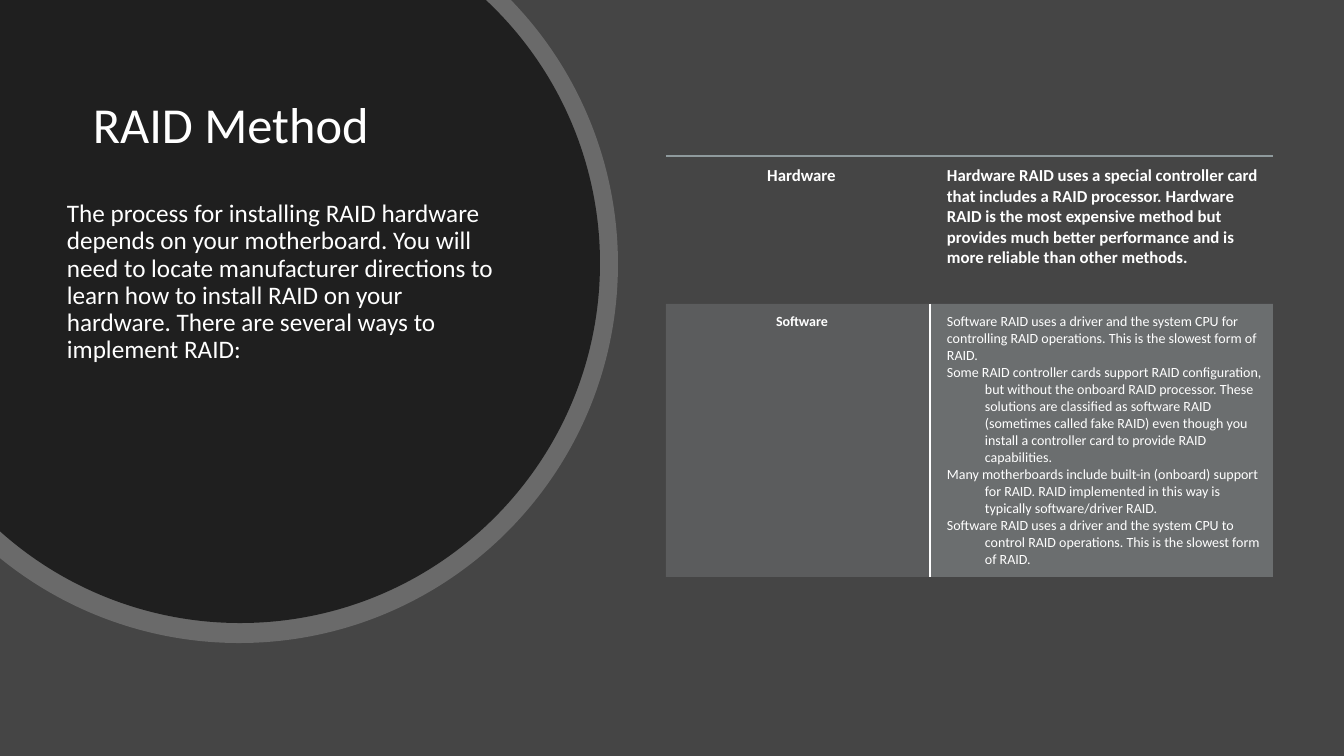
import math

from lxml import etree
from pptx import Presentation
from pptx import util as u
from pptx.dml.color import RGBColor
from pptx.enum import text
from pptx.oxml.ns import qn

HUES = {"back": "454545", "ring": "FFFFFF", "disc": "0D0D0D", "ink": "FFFFFF",
        "rule": "8F9A9D", "cell": "B4BCBE"}
PLAIN = "{2D5ABB26-0587-4C30-8999-92F81FD0307C}"
INTRO = ("The process for installing RAID hardware depends on your motherboard. "
         "You will need to locate manufacturer directions to learn how to install "
         "RAID on your hardware. There are several ways to implement RAID:")
HARD = ("Hardware RAID uses a special controller card that includes a RAID processor. "
        "Hardware RAID is the most expensive method but provides much better "
        "performance and is more reliable than other methods.")
SOFT = [
    "Software RAID uses a driver and the system CPU for controlling RAID operations. "
    "This is the slowest form of RAID.",
    "Some RAID controller cards support RAID configuration, but without the onboard "
    "RAID processor. These solutions are classified as software RAID (sometimes called "
    "fake RAID) even though you install a controller card to provide RAID capabilities.",
    "Many motherboards include built-in (onboard) support for RAID. RAID implemented "
    "in this way is typically software/driver RAID.",
    "Software RAID uses a driver and the system CPU to control RAID operations. "
    "This is the slowest form of RAID.",
]


def px(num):
    """Turn pixels into EMU."""
    return u.Emu(round(num * 63500 / 7))


def paint(fill, name, alpha=100):
    """Fill with a named colour at a percentage of opacity."""
    fill.solid()
    fill.fore_color.rgb = RGBColor.from_string(HUES[name])
    if alpha < 100:
        hue = fill._xPr.find(qn("a:solidFill"))[0]
        etree.SubElement(hue, qn("a:alpha"), val=str(alpha * 1000))


def style(para, size, bold=False):
    """Format the runs of a paragraph."""
    for run in para.runs:
        font = run.font
        font.name, font.size, font.bold = "Calibri", u.Pt(size), bold
        font.color.rgb = RGBColor.from_string(HUES["ink"])


def bend(step, x, y, rad, a, b):
    """Turn a line step into a cubic arc from angle a to angle b."""
    pull = 4 / 3 * math.tan((b - a) / 4)
    spots = [(math.cos(a) - pull * math.sin(a), math.sin(a) + pull * math.cos(a)),
             (math.cos(b) + pull * math.sin(b), math.sin(b) - pull * math.cos(b))]
    step.tag = qn("a:cubicBezTo")
    for i, (dx, dy) in enumerate(spots):
        spot = etree.Element(qn("a:pt"), x=str(px(x + rad * dx)), y=str(px(y + rad * dy)))
        step.insert(i, spot)


def disc(slide, x, y, rad, name, alpha):
    """Draw a circle cut off by the top and left slide edges."""
    turns = [-math.asin(y / rad), 0, math.pi / 2, math.acos(-x / rad)]
    ends = [(px(x + rad * math.cos(t)), px(y + rad * math.sin(t))) for t in turns]
    pen = slide.shapes.build_freeform(0, 0)
    pen.add_line_segments(ends, close=True)
    shape = pen.convert_to_shape()
    steps = list(shape._element.iter(qn("a:lnTo")))[1:4]
    for step, a, b in zip(steps, turns, turns[1:]):
        bend(step, x, y, rad, a, b)
    shape.shadow.inherit = False
    shape.line.fill.background()
    paint(shape.fill, name, alpha)


def label(slide, box, words, size, anchor, gap):
    """Add a wrapped text box with one paragraph."""
    frame = slide.shapes.add_textbox(*map(px, box)).text_frame
    frame.word_wrap = True
    frame.vertical_anchor = anchor
    frame.text = words
    para = frame.paragraphs[0]
    para.line_spacing, para.space_before = 0.9, u.Pt(gap)
    style(para, size)


def edge(cell, side, name, alpha=100):
    """Draw one border of a cell."""
    line = etree.SubElement(cell._tc.get_or_add_tcPr(), qn("a:ln" + side), w="19050")
    fill = etree.SubElement(line, qn("a:solidFill"))
    hue = etree.SubElement(fill, qn("a:srgbClr"), val=HUES[name])
    if alpha < 100:
        etree.SubElement(hue, qn("a:alpha"), val=str(alpha * 1000))


def write(cell, lines, size, bold, pad, mid):
    """Put paragraphs in a cell, with hanging indents after the first."""
    cell.margin_left = px(17)
    cell.margin_right = cell.margin_top = cell.margin_bottom = px(pad)
    cell.text_frame.text = "\n".join(lines)
    for i, para in enumerate(cell.text_frame.paragraphs):
        style(para, size, bold)
        if mid:
            para.alignment = text.PP_ALIGN.CENTER
        if i:
            props = para._p.get_or_add_pPr()
            props.set("marL", str(px(38)))
            props.set("indent", str(-px(38)))


def grid(slide):
    """Add the table of RAID methods."""
    table = slide.shapes.add_table(2, 2, px(666), px(156), px(607), px(421)).table
    table.first_row = table.horz_banding = False
    table._tbl.tblPr.find(qn("a:tableStyleId")).text = PLAIN
    for i, wide in enumerate((264, 343)):
        table.columns[i].width = px(wide)
    for i, high in enumerate((148, 273)):
        table.rows[i].height = px(high)
    for i, lines in enumerate((["Hardware"], [HARD])):
        cell = table.cell(0, i)
        write(cell, lines, 12, True, 10, i == 0)
        edge(cell, "T", "rule", 60)
        cell.fill.background()
    for i, (lines, side, alpha) in enumerate(((["Software"], "R", 20), (SOFT, "L", 35))):
        cell = table.cell(1, i)
        write(cell, lines, 10, i == 0, 9, i == 0)
        edge(cell, side, "ink")
        paint(cell.fill, "cell", alpha)


def main():
    """Build and save the slide."""
    deck = Presentation()
    deck.slide_width, deck.slide_height = px(1344), px(756)
    slide = deck.slides.add_slide(deck.slide_layouts[6])
    paint(slide.background.fill, "back")
    disc(slide, 239, 264, 379, "ring", 20)
    disc(slide, 240, 263, 360, "disc", 80)
    label(slide, (83, 70, 448, 115), "RAID Method", 36, text.MSO_ANCHOR.MIDDLE, 0)
    label(slide, (57, 196, 448, 303), INTRO, 18, text.MSO_ANCHOR.TOP, 10)
    grid(slide)
    deck.save("out.pptx")


if __name__ == "__main__":
    main()
